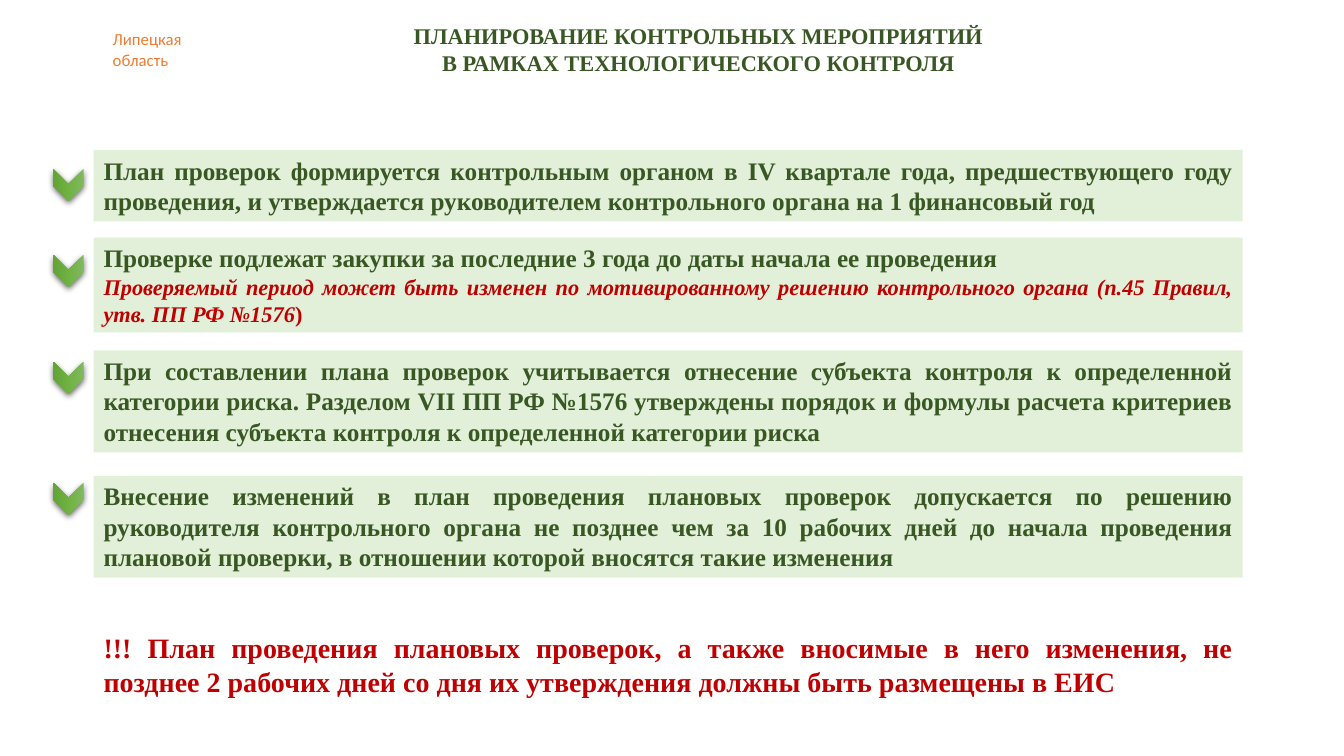
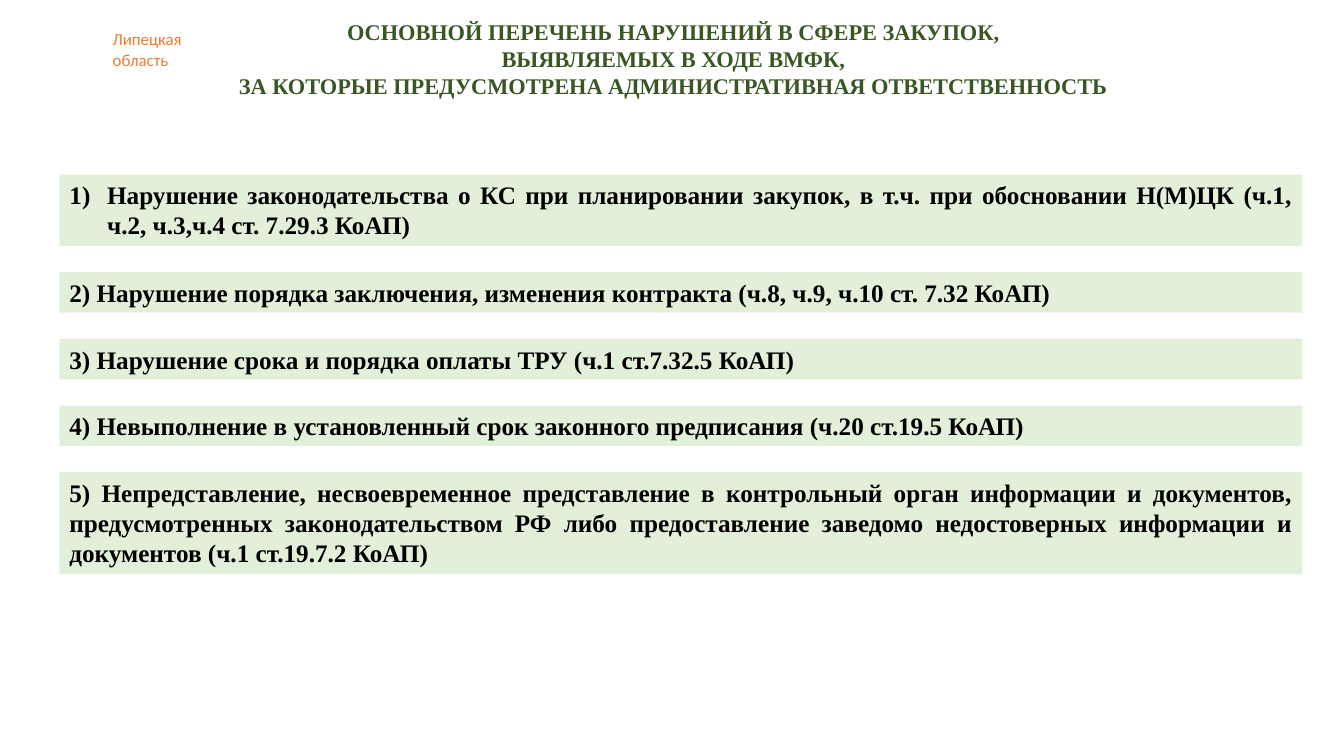
"""Build two slides on planning procurement inspections and typical violations."""
from dataclasses import dataclass

from lxml import etree
from pptx import Presentation
from pptx.dml.color import RGBColor
from pptx.enum.shapes import MSO_SHAPE
from pptx.enum.text import MSO_ANCHOR, MSO_AUTO_SIZE, PP_ALIGN
from pptx.oxml.ns import qn
from pptx.presentation import Presentation as Deck
from pptx.shapes.autoshape import Shape
from pptx.slide import Slide
from pptx.text.text import TextFrame
from pptx.util import Cm, Pt

RECTANGLE, CHEVRON = MSO_SHAPE.RECTANGLE, MSO_SHAPE.CHEVRON
LEFT, CENTER, JUSTIFY = PP_ALIGN.LEFT, PP_ALIGN.CENTER, PP_ALIGN.JUSTIFY
TOP, FIT_SHAPE = MSO_ANCHOR.TOP, MSO_AUTO_SIZE.SHAPE_TO_FIT_TEXT
TITLE_ONLY = 5


@dataclass(frozen=True)
class Theme:
    """Colours, fonts and type sizes of the deck."""
    green: str = "385723"
    pale_green: str = "E2F0D9"
    red: str = "C00000"
    orange: str = "ED7D31"
    black: str = "000000"
    chevron_stops: tuple[tuple[int, str], ...] = ((0, "81B861"), (50, "6FB242"), (100, "62A336"))
    serif: str = "Times New Roman"
    sans: str = "Calibri"
    label_size: int = 12
    title_size: int = 16
    note_size: int = 16
    body_size: int = 18
    warning_size: int = 20


THEME = Theme()


@dataclass(frozen=True)
class Box:
    """Position and size in centimetres."""
    left: float
    top: float
    width: float
    height: float


@dataclass(frozen=True)
class Span:
    """A run of text in one style."""
    text: str
    size: int = THEME.body_size
    color: str = THEME.green
    bold: bool = True
    italic: bool = False
    font: str = THEME.serif


Para = tuple[Span, ...]


@dataclass(frozen=True)
class Step:
    """A planning rule with its chevron."""
    top: float
    height: float
    chevron_top: float
    paras: tuple[Para, ...]


@dataclass(frozen=True)
class Violation:
    """A violation in the list."""
    text: str
    height: float = 1.02
    numbered: bool = False


REGION_BOX = Box(2.59, 0.61, 2.5, 1.27)
WARNING_BOX = Box(2.36, 15.77, 28.96, 1.96)
STEP_LEFT, STEP_WIDTH = 2.36, 28.96
CHEVRON_LEFT, CHEVRON_WIDTH, CHEVRON_HEIGHT = 1.32, 0.81, 0.76
LIST_LEFT, LIST_TOP, LIST_WIDTH, LIST_GAP = 1.5, 4.4, 31.32, 0.66
NUMBER_INDENT = 0.95

STEPS = (
    Step(3.78, 1.8, 4.29, ((Span(
        "План проверок формируется контрольным органом в IV квартале года, предшествующего году "
        "проведения, и утверждается руководителем контрольного органа на 1 финансовый год"),),)),
    Step(5.99, 2.39, 6.45, (
        (Span("Проверке подлежат закупки за последние 3 года до даты начала ее проведения"),),
        (Span("Проверяемый период может быть изменен по мотивированному решению контрольного органа "
              "(п.45 Правил, утв. ПП РФ №1576", THEME.note_size, THEME.red, italic=True),
         Span(")", THEME.note_size, THEME.red)))),
    Step(8.83, 2.57, 9.14, ((Span(
        "При составлении плана проверок учитывается отнесение субъекта контроля к определенной "
        "категории риска. Разделом VII ПП РФ №1576 утверждены порядок и формулы расчета критериев "
        "отнесения субъекта контроля к определенной категории риска"),),)),
    Step(11.99, 2.57, 12.19, ((Span(
        "Внесение изменений в план проведения плановых проверок допускается по решению "
        "руководителя контрольного органа не позднее чем за 10 рабочих дней до начала проведения "
        "плановой проверки, в отношении которой вносятся такие изменения"),),)),
)

WARNING = Span(
    "!!! План проведения плановых проверок, а также вносимые в него изменения, не позднее "
    "2 рабочих дней со дня их утверждения должны быть размещены в ЕИС",
    THEME.warning_size, THEME.red)

VIOLATIONS = (
    Violation("Нарушение законодательства о КС при планировании закупок, в т.ч. при обосновании "
              "Н(М)ЦК (ч.1, ч.2, ч.3,ч.4 ст. 7.29.3 КоАП)", 1.8, True),
    Violation("2) Нарушение порядка заключения, изменения контракта (ч.8, ч.9, ч.10 ст. 7.32 КоАП)"),
    Violation("3) Нарушение срока и порядка оплаты ТРУ (ч.1 ст.7.32.5 КоАП)"),
    Violation("4) Невыполнение в установленный срок законного предписания (ч.20 ст.19.5 КоАП)"),
    Violation("5) Непредставление, несвоевременное представление в контрольный орган информации и "
              "документов, предусмотренных законодательством РФ либо предоставление заведомо "
              "недостоверных информации и документов (ч.1 ст.19.7.2 КоАП)", 2.57),
)


def lengths(box: Box) -> tuple[Cm, Cm, Cm, Cm]:
    """Return the box as python-pptx lengths."""
    return Cm(box.left), Cm(box.top), Cm(box.width), Cm(box.height)


def write_paras(frame: TextFrame, paras: tuple[Para, ...], alignment: PP_ALIGN) -> None:
    """Fill a text frame with styled paragraphs."""
    frame.word_wrap = True
    frame.auto_size = FIT_SHAPE
    frame.vertical_anchor = TOP
    frame.text = "\n".join(para[0].text for para in paras)
    for paragraph, para in zip(frame.paragraphs, paras):
        paragraph.alignment = alignment
        for span in para[1:]:
            paragraph.add_run().text = span.text
        for run, span in zip(paragraph.runs, para):
            font = run.font
            font.name, font.size = span.font, Pt(span.size)
            font.bold, font.italic = span.bold, span.italic
            font.color.rgb = RGBColor.from_string(span.color)


def add_text(slide: Slide, box: Box, paras: tuple[Para, ...], alignment: PP_ALIGN) -> None:
    """Add a plain text box."""
    write_paras(slide.shapes.add_textbox(*lengths(box)).text_frame, paras, alignment)


def add_panel(slide: Slide, box: Box, paras: tuple[Para, ...]) -> Shape:
    """Add a pale green panel with justified text."""
    panel = slide.shapes.add_shape(RECTANGLE, *lengths(box))
    panel.shadow.inherit = False
    panel.fill.solid()
    panel.fill.fore_color.rgb = RGBColor.from_string(THEME.pale_green)
    panel.line.fill.background()
    write_paras(panel.text_frame, paras, JUSTIFY)
    return panel


def add_color(parent: etree._Element, color: str) -> etree._Element:
    """Append an RGB colour element."""
    return etree.SubElement(parent, qn("a:srgbClr"), val=color)


def add_chevron(slide: Slide, top: float) -> None:
    """Add a downward chevron with a gradient and a soft shadow."""
    box = Box(CHEVRON_LEFT, top, CHEVRON_WIDTH, CHEVRON_HEIGHT)
    chevron = slide.shapes.add_shape(CHEVRON, *lengths(box))
    chevron.rotation = 90
    chevron.line.fill.background()
    chevron.fill.gradient()
    chevron.fill.gradient_angle = 270
    chevron.shadow.inherit = False
    properties = chevron.element.spPr
    stops = properties.find(".//" + qn("a:gsLst"))
    for stop in list(stops):
        stops.remove(stop)
    for percent, color in THEME.chevron_stops:
        add_color(etree.SubElement(stops, qn("a:gs"), pos=str(percent * 1000)), color)
    shadow = etree.SubElement(
        properties.find(qn("a:effectLst")), qn("a:outerShdw"), blurRad=str(Pt(4.5)),
        dist=str(Pt(1.5)), dir="5400000", algn="ctr", rotWithShape="0")
    etree.SubElement(add_color(shadow, THEME.black), qn("a:alpha"), val="63000")


def number_first(panel: Shape) -> None:
    """Give the panel's paragraph an automatic number and a hanging indent."""
    indent = Cm(NUMBER_INDENT)
    properties = panel.text_frame.paragraphs[0]._p.get_or_add_pPr()
    properties.set("marL", str(indent))
    properties.set("indent", str(-indent))
    etree.SubElement(properties, qn("a:buAutoNum"), type="arabicParenR")


def add_titled_slide(deck: Deck, box: Box, lines: tuple[str, ...]) -> Slide:
    """Add a slide with the region label and a centred title."""
    slide = deck.slides.add_slide(deck.slide_layouts[TITLE_ONLY])
    title = slide.shapes.title
    title.left, title.top, title.width, title.height = lengths(box)
    write_paras(title.text_frame, tuple((Span(line, THEME.title_size),) for line in lines), CENTER)
    region = tuple((Span(word, THEME.label_size, THEME.orange, False, font=THEME.sans),)
                   for word in ("Липецкая", "область"))
    add_text(slide, REGION_BOX, region, LEFT)
    return slide


def build_planning(deck: Deck) -> None:
    """Build the slide on planning inspections."""
    slide = add_titled_slide(deck, Box(3.12, 0.43, 28.96, 1.63), (
        "ПЛАНИРОВАНИЕ КОНТРОЛЬНЫХ МЕРОПРИЯТИЙ", "В РАМКАХ ТЕХНОЛОГИЧЕСКОГО КОНТРОЛЯ"))
    for step in STEPS:
        add_panel(slide, Box(STEP_LEFT, step.top, STEP_WIDTH, step.height), step.paras)
        add_chevron(slide, step.chevron_top)
    add_text(slide, WARNING_BOX, ((WARNING,),), JUSTIFY)


def build_violations(deck: Deck) -> None:
    """Build the slide listing violations in an evenly spaced stack."""
    slide = add_titled_slide(deck, Box(2.49, 0.33, 28.96, 2.31), (
        "ОСНОВНОЙ ПЕРЕЧЕНЬ НАРУШЕНИЙ В СФЕРЕ ЗАКУПОК,", "ВЫЯВЛЯЕМЫХ В ХОДЕ ВМФК,",
        "ЗА КОТОРЫЕ ПРЕДУСМОТРЕНА АДМИНИСТРАТИВНАЯ ОТВЕТСТВЕННОСТЬ"))
    top = LIST_TOP
    for violation in VIOLATIONS:
        box = Box(LIST_LEFT, top, LIST_WIDTH, violation.height)
        panel = add_panel(slide, box, ((Span(violation.text, color=THEME.black),),))
        if violation.numbered:
            number_first(panel)
        top += violation.height + LIST_GAP


def main() -> None:
    """Build and save the deck."""
    deck = Presentation()
    deck.slide_width, deck.slide_height = Cm(33.87), Cm(19.05)
    build_planning(deck)
    build_violations(deck)
    deck.save("out.pptx")


if __name__ == "__main__":
    main()
